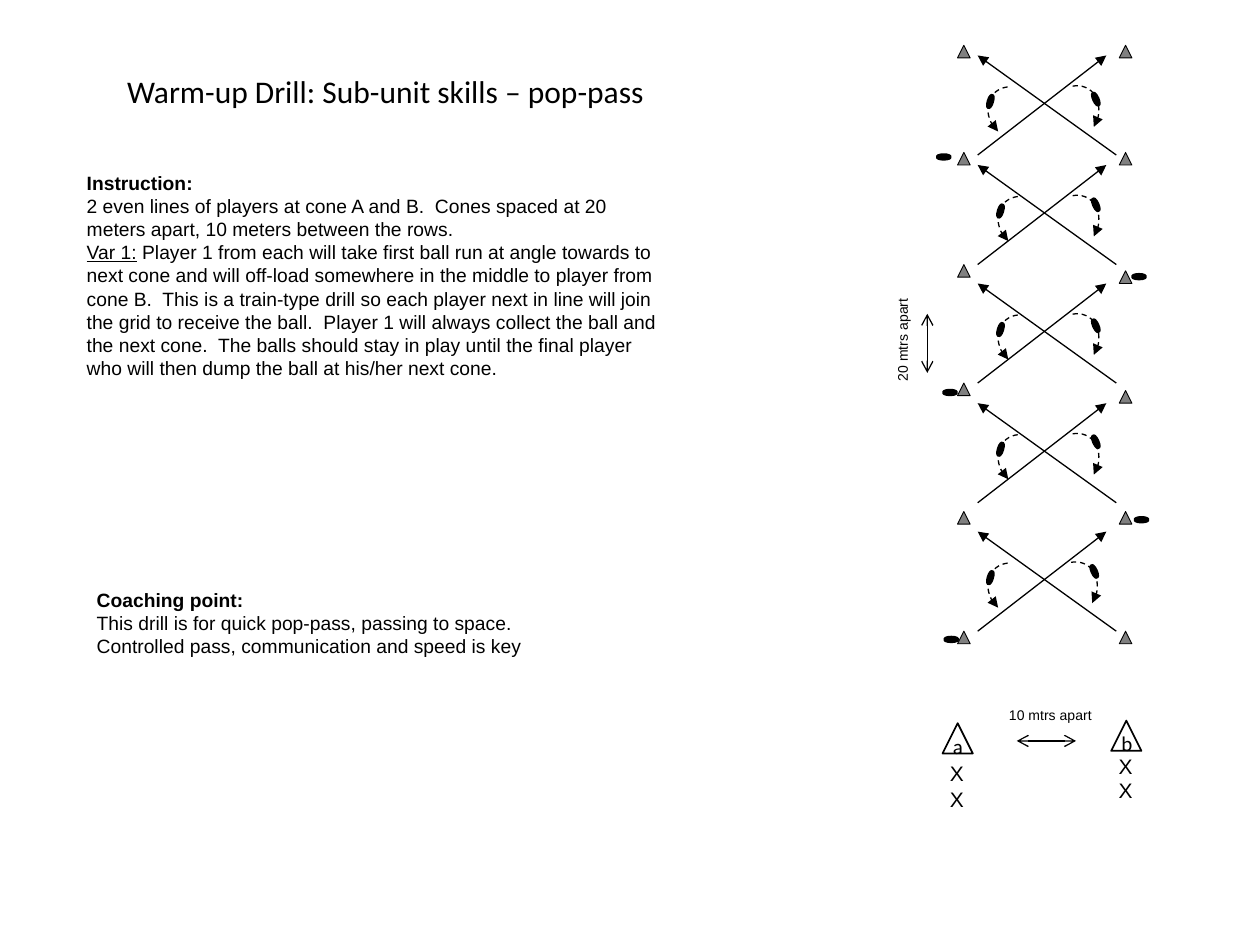
from lxml.etree import SubElement
from pptx import Presentation
from pptx.dml.color import RGBColor
from pptx.enum.dml import MSO_LINE
from pptx.enum.shapes import MSO_CONNECTOR, MSO_SHAPE as SHAPE
from pptx.enum.text import MSO_ANCHOR, MSO_AUTO_SIZE, PP_ALIGN
from pptx.oxml.ns import qn
from pptx.util import Pt

BLACK = RGBColor(0x00, 0x00, 0x00)
GRAY = RGBColor(0x80, 0x80, 0x80)

BOLD = {"bold": True}
UNDERLINED = {"underline": True}

# Cone columns and the top of each cone, from far end to start
CONES = {
    547.2: (25.9, 87.1, 151.2, 218.9, 292.3, 360.7),
    639.6: (25.9, 87.1, 154.8, 223.2, 292.3, 360.7),
}
# Balls waiting beside the cones
WAITING_BALLS = ((535.7, 88.6), (647.3, 157), (539.3, 223.2),
                 (648.7, 295.9), (540, 364.3))
# Each crossing: top, shift of left pass, shift of right pass, drop of right ball
CROSSINGS = (
    (31.7, 0, 0, 23.8),
    (94.3, 5.8, 0, 21.6),
    (162, 5.8, 0, 23),
    (230.4, 5.8, 0, 20.9),
    (303.8, 0, -0.9, 21.6),
)
CROSSING_HEIGHT = 56.9

INSTRUCTION = (
    (("Instruction:", BOLD),),
    (("2 even lines of players at cone A and B.  Cones spaced at 20 meters "
      "apart, 10 meters between the rows.", {}),),
    (("Var 1:", UNDERLINED),
     (" Player 1 from each will take first ball run at angle towards to next "
      "cone and will off-load somewhere in the middle to player from cone B.  "
      "This is a train-type drill so each player next in line will join the "
      "grid to receive the ball.  Player 1 will always collect the ball and "
      "the next cone.  The balls should stay in play until the final player "
      "who will then dump the ball at his/her next cone.", {})),
)
COACHING = (
    (("Coaching point:", BOLD),),
    (("This drill is for quick pop-pass, passing to space.  Controlled pass, "
      "communication and speed is key", {}),),
)


def plain(text):
    return (((text, {}),),)


def write(frame, paragraphs, size, font_name):
    for index, runs in enumerate(paragraphs):
        paragraph = frame.paragraphs[0] if index == 0 else frame.add_paragraph()
        for text, extra in runs:
            run = paragraph.add_run()
            run.text = text
            run.font.color.rgb = BLACK
            look = {"size": Pt(size), "name": font_name, **extra}
            for key, value in look.items():
                setattr(run.font, key, value)


def add_text(slide, box, paragraphs, size, font_name="Arial", wrap=True, rotation=0):
    label = slide.shapes.add_textbox(*map(Pt, box))
    label.rotation = rotation
    label.text_frame.word_wrap = wrap
    label.text_frame.auto_size = MSO_AUTO_SIZE.SHAPE_TO_FIT_TEXT
    write(label.text_frame, paragraphs, size, font_name)


def add_figure(slide, kind, box, width, fill=None, rotation=0):
    figure = slide.shapes.add_shape(kind, *map(Pt, box))
    figure.shadow.inherit = False
    figure.rotation = rotation
    if fill is None:
        figure.fill.background()
    else:
        figure.fill.solid()
        figure.fill.fore_color.rgb = fill
    figure.line.color.rgb = BLACK
    figure.line.width = Pt(width)
    return figure


def add_arrowheads(line, **ends):
    outline = line.get_or_add_ln() if hasattr(line, "get_or_add_ln") else line
    for end, kind in ends.items():
        SubElement(outline, qn(f"a:{end}"), type=kind)


def add_arrow(slide, start, finish, **ends):
    arrow = slide.shapes.add_connector(
        MSO_CONNECTOR.STRAIGHT, *map(Pt, start + finish))
    arrow.line.color.rgb = BLACK
    arrow.line.width = Pt(0.75)
    properties = arrow._element.spPr
    add_arrowheads(properties, **ends)
    SubElement(properties, qn("a:effectLst"))


def add_ball(slide, left, top, rotation=0):
    add_figure(slide, SHAPE.OVAL, (left, top, 7.2, 2.2), 2, BLACK, rotation)


def add_pass(slide, left, top, height, rotation, flipped=False):
    curve = add_figure(slide, SHAPE.ARC, (left, top, 28.1, height), 0.75,
                       rotation=rotation)
    curve.adjustments[0] = 142.914
    curve.adjustments[1] = 0
    curve.line.dash_style = MSO_LINE.DASH
    properties = curve._element.spPr
    if flipped:
        properties.find(qn("a:xfrm")).set("flipV", "1")
    add_arrowheads(properties, tailEnd="triangle")


def add_crossing(slide, top, left_shift, right_shift, right_drop):
    bottom = top + CROSSING_HEIGHT
    # Running lines
    add_arrow(slide, (558.7, bottom), (632.2, top), tailEnd="triangle")
    add_arrow(slide, (637.9, bottom), (558.7, top), tailEnd="triangle")
    # Pop-passes with their balls
    add_pass(slide, 599 + right_shift, top + 16.6, 33.8, 31.5)
    add_pass(slide, 565.9 + left_shift, top + 16.6, 33.1, 132.9, flipped=True)
    add_ball(slide, 622.6 + right_shift, top + right_drop, 246)
    add_ball(slide, 562.3 + left_shift, top + 25.2, 107)


def add_start_line(slide, letter, cone_left, cone_top, players_left, player_tops):
    cone = add_figure(slide, SHAPE.ISOSCELES_TRIANGLE,
                      (cone_left, cone_top, 17.3, 17.3), 1)
    cone.text_frame.vertical_anchor = MSO_ANCHOR.MIDDLE
    write(cone.text_frame, plain(letter), 12, "Calibri")
    cone.text_frame.paragraphs[0].alignment = PP_ALIGN.CENTER
    for top in player_tops:
        add_text(slide, (players_left, top, 33.8, 21.6), plain("X"), 12)


def main():
    deck = Presentation()
    deck.slide_width, deck.slide_height = Pt(720), Pt(540)
    slide = deck.slides.add_slide(deck.slide_layouts[6])

    # Title and explanation
    add_text(slide, (65.5, 37.4, 313.2, 28.8),
             plain("Warm-up Drill: Sub-unit skills – pop-pass"),
             18, "Calibri", wrap=False)
    add_text(slide, (42.5, 94.3, 345.6, 127.4), INSTRUCTION, 11)
    add_text(slide, (48.2, 332.6, 266.4, 47.5), COACHING, 11)

    # Start of both lines
    add_start_line(slide, "a", 538.6, 413.3, 535.7, (431.3, 445.7))
    add_start_line(slide, "b", 635, 411.8, 632.2, (427, 440.6))

    # Distances
    both_ends = {"headEnd": "arrow", "tailEnd": "arrow"}
    add_text(slide, (569.5, 400.3, 62.6, 17.3), plain("10 mtrs apart"), 8, wrap=False)
    add_arrow(slide, (614.9, 423.4), (581, 423.4), **both_ends)
    add_text(slide, (484.6, 185, 62.6, 17.3), plain("20 mtrs apart"), 8,
             wrap=False, rotation=270)
    add_arrow(slide, (529.9, 179.3), (529.9, 213.1), **both_ends)

    # Grid of cones and waiting balls
    for left, tops in CONES.items():
        for top in tops:
            add_figure(slide, SHAPE.ISOSCELES_TRIANGLE, (left, top, 7.2, 7.2),
                       0.5, GRAY)
    for left, top in WAITING_BALLS:
        add_ball(slide, left, top)

    # Crossing runs
    for crossing in CROSSINGS:
        add_crossing(slide, *crossing)

    deck.save("out.pptx")


if __name__ == "__main__":
    main()
